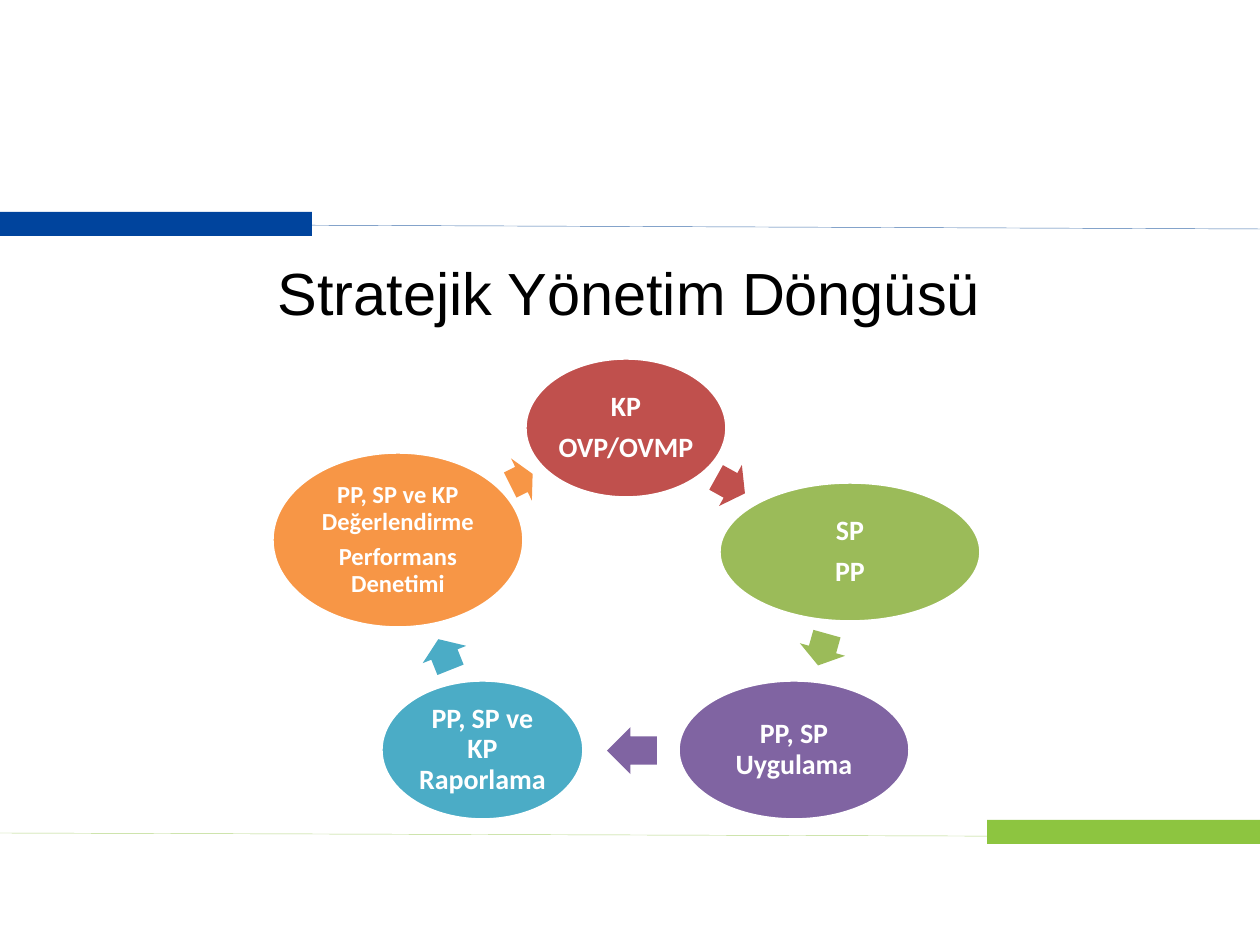
from lxml import etree
from pptx import Presentation
from pptx import util as u
from pptx.dml.color import RGBColor
from pptx.enum import shapes, text
from pptx.oxml.ns import qn

SCALE = u.Inches(1) / 126


def px(length):
    return u.Emu(round(length * SCALE))


def color(value):
    return RGBColor.from_string(value)


class CycleSlide:
    WHITE = "FFFFFF"

    def __init__(self, deck):
        self.slide = deck.slides.add_slide(deck.slide_layouts[5])

    def line(self, start, end, stroke):
        line = self.slide.shapes.add_connector(
            shapes.MSO_CONNECTOR.STRAIGHT, *map(px, start + end))
        line.line.color.rgb = color(stroke)
        line.line.width = u.Pt(0.25)
        properties = line.element.find(qn("p:spPr"))
        etree.SubElement(properties, qn("a:effectLst"))

    def shape(self, kind, area, fill):
        shape = self.slide.shapes.add_shape(kind, *map(px, area))
        shape.shadow.inherit = False
        shape.fill.solid()
        shape.fill.fore_color.rgb = color(fill)
        shape.line.fill.background()
        return shape

    def bar(self, area, fill):
        self.shape(shapes.MSO_SHAPE.RECTANGLE, area, fill)

    def arrow(self, area, fill, rotation):
        arrow = self.shape(shapes.MSO_SHAPE.RIGHT_ARROW, area, fill)
        arrow.rotation = rotation
        arrow.adjustments[0] = 0.6
        arrow.adjustments[1] = 0.5

    def set_text(self, frame, lines, font, size, ink, bold=False):
        frame.word_wrap = True
        frame.auto_size = text.MSO_AUTO_SIZE.NONE
        frame.vertical_anchor = text.MSO_ANCHOR.MIDDLE
        frame.text = "\n".join(lines)
        for para in frame.paragraphs:
            para.alignment = text.PP_ALIGN.CENTER
            para.font.name = font
            para.font.size = u.Pt(size)
            para.font.bold = bold
            para.font.color.rgb = color(ink)

    def title(self, area, words):
        title = self.slide.shapes.title
        title.left, title.top, title.width, title.height = map(px, area)
        self.set_text(title.text_frame, [words], "Arial", 34, "000000")

    def stage(self, area, fill, size, lines):
        oval = self.shape(shapes.MSO_SHAPE.OVAL, area, fill)
        oval.line.color.rgb = color(self.WHITE)
        oval.line.width = u.Pt(2)
        frame = oval.text_frame
        frame.margin_left = frame.margin_right = px(3)
        frame.margin_top = frame.margin_bottom = px(3)
        self.set_text(frame, lines, "Calibri", size, self.WHITE, bold=True)
        for para in frame.paragraphs:
            para.line_spacing = 0.9
            para.space_after = u.Pt(round(size * 0.37))


# Each stage: colour, oval, text size, lines, arrow to the next stage, its rotation
STAGES = [
    ("C0504D", (525, 358, 202, 140), 16, ["KP", "OVP/OVMP"],
     (714, 462, 33, 47), 29),
    ("9BBB59", (719, 482, 262, 140), 16, ["SP", "PP"],
     (806, 626, 33, 47), 105.6),
    ("8064A2", (678, 680, 232, 140), 16, ["PP, SP Uygulama"],
     (607, 727, 50, 47), 180),
    ("4BACC6", (381, 680, 203, 140), 16, ["PP, SP ve KP Raporlama"],
     (428, 631, 33, 47), 248.3),
    ("F79646", (272, 452, 252, 176), 14,
     ["PP, SP ve KP Değerlendirme", "Performans Denetimi"],
     (509, 456, 25, 47), 333.6),
]


def main():
    deck = Presentation()
    deck.slide_width, deck.slide_height = px(1260), px(945)
    page = CycleSlide(deck)
    page.line((1, 224), (1260, 229), "4372AF")
    page.bar((0, 212, 312, 24), "00449D")
    page.line((1260, 837), (0, 833), "B5D782")
    page.bar((987, 820, 273, 24), "8DC540")
    page.title((62, 226, 1134, 132), "Stratejik Yönetim Döngüsü")
    for fill, oval, size, lines, arrow, rotation in STAGES:
        page.stage(oval, fill, size, lines)
        page.arrow(arrow, fill, rotation)
    deck.save("out.pptx")


if __name__ == "__main__":
    main()
